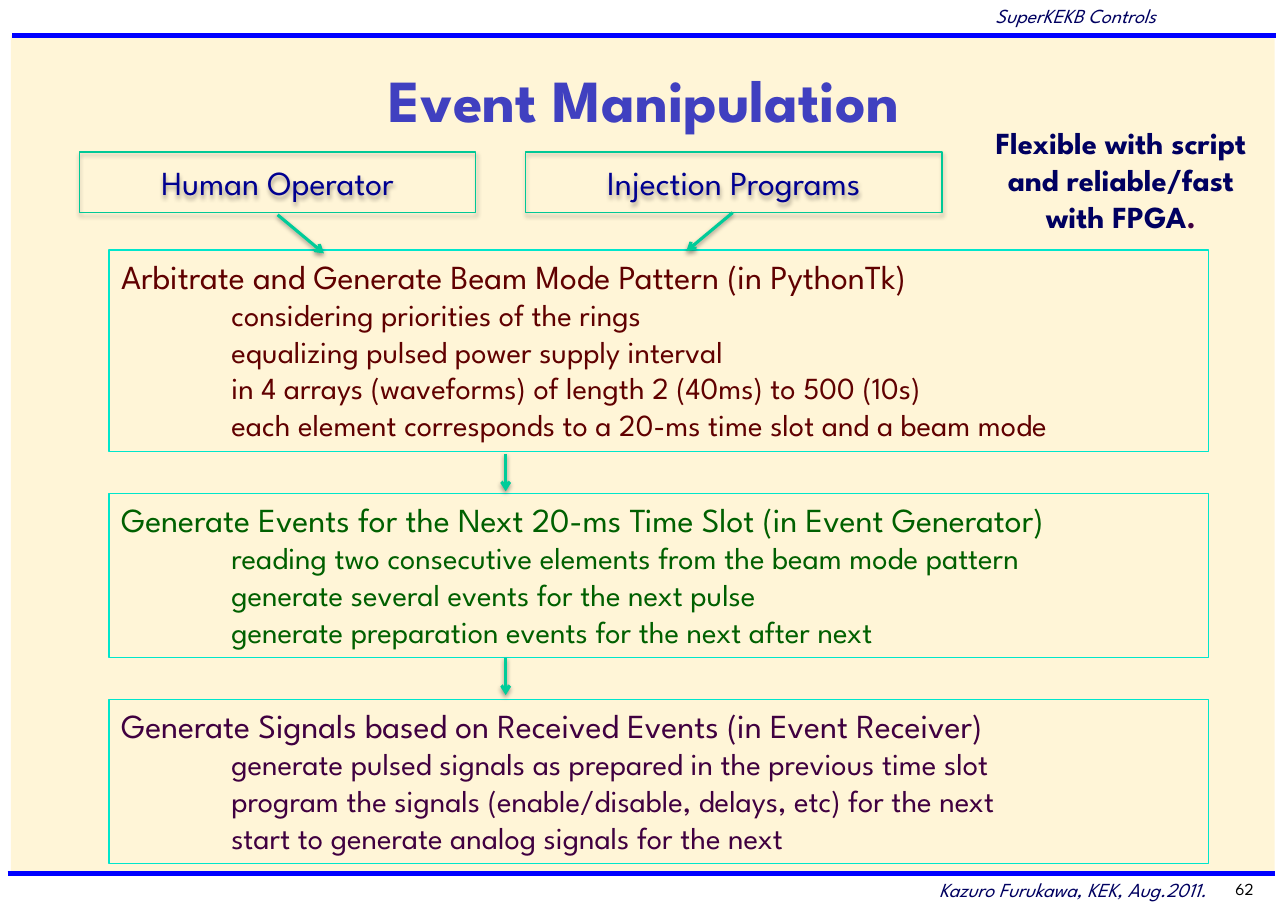
from dataclasses import dataclass

from lxml.etree import SubElement
from pptx import Presentation
from pptx.dml.color import RGBColor
from pptx.enum.shapes import MSO_CONNECTOR, MSO_SHAPE
from pptx.enum.text import MSO_ANCHOR, MSO_AUTO_SIZE, PP_ALIGN
from pptx.oxml.ns import qn
from pptx.util import Inches, Pt


@dataclass(frozen=True)
class Theme:
    font: str = "League Spartan"
    panel: str = "FFF5D7"
    rule: str = "0000FF"
    title: str = "4040C0"
    navy: str = "000060"
    source: str = "000090"
    source_line: str = "00C896"
    stage_line: str = "00E6CC"
    arrow: str = "00CC99"
    arbitrate: str = "600000"
    generate: str = "006000"
    receive: str = "400040"
    black: str = "000000"
    title_size: int = 39
    head_size: int = 22
    body_size: int = 20
    margin_size: int = 13
    number_size: int = 11


class SlideBuilder:
    def __init__(self, slide, theme):
        self.s = slide
        self.theme = theme

    def run(self, p, text, size, color, bold=False, italic=False):
        r = p.add_run()
        r.text = text
        font = r.font
        font.name = self.theme.font
        font.size = Pt(size)
        font.bold = bold
        font.italic = italic
        font.color.rgb = RGBColor.from_string(color)

    def frame(self, sp, anchor=MSO_ANCHOR.TOP):
        """Apply the common text margins and return the text frame."""
        tf = sp.text_frame
        tf.word_wrap = True
        tf.auto_size = MSO_AUTO_SIZE.NONE
        tf.vertical_anchor = anchor
        tf.margin_left = tf.margin_right = Inches(0.11)
        tf.margin_top = tf.margin_bottom = Inches(0.05)
        return tf

    def shadow(self, effects, alpha, blur, dist):
        """Add a downward outer shadow to an effect list."""
        outer = SubElement(effects, qn("a:outerShdw"), blurRad=str(Pt(blur)),
                           dist=str(Pt(dist)), dir="5400000", rotWithShape="0")
        color = SubElement(outer, qn("a:srgbClr"), val=self.theme.black)
        SubElement(color, qn("a:alpha"), val=str(alpha * 1000))

    def box(self, at, fill=None, line=None, width=1):
        sp = self.s.shapes.add_shape(MSO_SHAPE.RECTANGLE, *map(Inches, at))
        sp.shadow.inherit = False
        if fill:
            sp.fill.solid()
            sp.fill.fore_color.rgb = RGBColor.from_string(fill)
        else:
            sp.fill.background()
        if line:
            sp.line.color.rgb = RGBColor.from_string(line)
            sp.line.width = Pt(width)
        else:
            sp.line.fill.background()
        return sp

    def line(self, start, end, color, width):
        """Draw a plain line; return its line and effect elements."""
        points = map(Inches, (*start, *end))
        c = self.s.shapes.add_connector(MSO_CONNECTOR.STRAIGHT, *points)
        c.line.color.rgb = RGBColor.from_string(color)
        c.line.width = Pt(width)
        spPr = c._element.spPr
        return spPr.find(qn("a:ln")), SubElement(spPr, qn("a:effectLst"))

    def arrow(self, start, end):
        ln, effects = self.line(start, end, self.theme.arrow, 2)
        SubElement(ln, qn("a:tailEnd"), type="arrow")
        self.shadow(effects, 38, 3.1, 1.6)

    def title(self, text, at):
        sp = self.s.shapes.title
        sp.left, sp.top, sp.width, sp.height = map(Inches, at)
        p = self.frame(sp, MSO_ANCHOR.MIDDLE).paragraphs[0]
        p.alignment = PP_ALIGN.CENTER
        self.run(p, text, self.theme.title_size, self.theme.title, bold=True)

    def text(self, at, align):
        """Add a text box and return its first paragraph."""
        sp = self.s.shapes.add_textbox(*map(Inches, at))
        p = self.frame(sp).paragraphs[0]
        p.alignment = align
        return p

    def margin_note(self, text, at):
        p = self.text(at, PP_ALIGN.RIGHT)
        self.run(p, text, self.theme.margin_size, self.theme.navy, italic=True)

    def source(self, text, left, width):
        sp = self.box((left, 1.38, width, 0.55), line=self.theme.source_line, width=0.75)
        self.shadow(sp._element.spPr.find(qn("a:effectLst")), 35, 3.1, 1.8)
        p = self.frame(sp, MSO_ANCHOR.MIDDLE).paragraphs[0]
        p.alignment = PP_ALIGN.CENTER
        self.run(p, text, self.theme.head_size, self.theme.source)

    def stage(self, top, height, color, head, steps):
        sp = self.box((0.99, top, 9.98, height), line=self.theme.stage_line)
        tf = self.frame(sp)
        p = tf.paragraphs[0]
        p.alignment = PP_ALIGN.LEFT
        self.run(p, head, self.theme.head_size, color)
        for step in steps:
            p = tf.add_paragraph()
            p.alignment = PP_ALIGN.LEFT
            pPr = p._p.get_or_add_pPr()
            pPr.set("marL", str(Inches(1)))
            pPr.set("indent", "0")
            self.run(p, step, self.theme.body_size, color)


def main():
    theme = Theme()
    prs = Presentation()
    prs.slide_width, prs.slide_height = Inches(11.69), Inches(8.27)
    b = SlideBuilder(prs.slides.add_slide(prs.slide_layouts[5]), theme)

    b.box((0.1, 0.32, 11.47, 7.62), fill=theme.panel)
    b.line((0.11, 0.32), (11.58, 0.32), theme.rule, 3)
    b.line((0.07, 7.93), (11.57, 7.93), theme.rule, 3)
    b.margin_note("Kazuro Furukawa, KEK, Aug.2011.", (7.85, 7.92, 3.21, 0.33))
    b.margin_note("SuperKEKB Controls", (7.85, -0.02, 2.75, 0.33))
    number = b.text((10.81, 7.93, 0.68, 0.28), PP_ALIGN.RIGHT)
    b.run(number, "62", theme.number_size, theme.black)

    # The title placeholder comes first in the tree, so lift it above the panel.
    tree = b.s.shapes._spTree
    tree.append(b.s.shapes.title._element)
    b.title("Event Manipulation", (0.18, 0.51, 11.33, 0.78))

    b.source("Human Operator", 0.72, 3.6)
    b.source("Injection Programs", 4.77, 3.78)

    stages = [
        (2.27, 1.83, theme.arbitrate,
         "Arbitrate and Generate Beam Mode Pattern (in PythonTk)",
         ["considering priorities of the rings",
          "equalizing pulsed power supply interval",
          "in 4 arrays (waveforms) of length 2 (40ms) to 500 (10s)",
          "each element corresponds to a 20-ms time slot and a beam mode"]),
        (4.48, 1.49, theme.generate,
         "Generate Events for the Next 20-ms Time Slot (in Event Generator)",
         ["reading two consecutive elements from the beam mode pattern",
          "generate several events for the next pulse",
          "generate preparation events for the next after next"]),
        (6.35, 1.49, theme.receive,
         "Generate Signals based on Received Events (in Event Receiver)",
         ["generate pulsed signals as prepared in the previous time slot",
          "program the signals (enable/disable, delays, etc) for the next",
          "start to generate analog signals for the next"]),
    ]
    for stage in stages:
        b.stage(*stage)

    arrows = [((2.52, 1.95), (2.94, 2.3)), ((6.65, 1.93), (6.23, 2.28)),
              ((4.59, 4.12), (4.59, 4.46)), ((4.59, 5.97), (4.59, 6.31))]
    for start, end in arrows:
        b.arrow(start, end)

    remark = b.text((8.76, 1.08, 2.83, 1.14), PP_ALIGN.CENTER)
    b.run(remark, "Flexible with script and reliable/fast with FPGA",
          theme.body_size, theme.navy, bold=True)
    b.run(remark, ".", theme.body_size, theme.receive, bold=True)

    prs.save("out.pptx")


if __name__ == "__main__":
    main()
